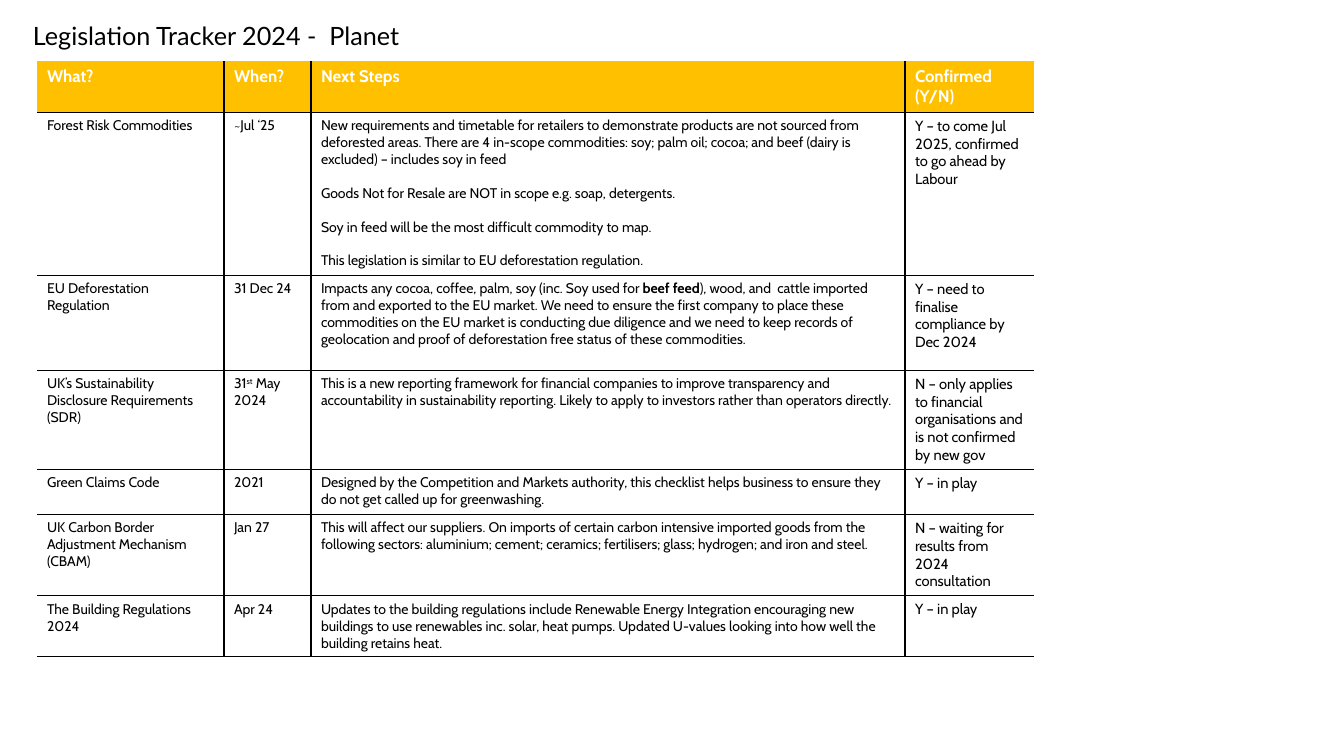
from lxml import etree
from pptx import Presentation
from pptx.dml.color import RGBColor
from pptx.enum.text import MSO_AUTO_SIZE
from pptx.oxml.ns import qn
from pptx.util import Emu, Pt

SHAPE_TO_FIT = MSO_AUTO_SIZE.SHAPE_TO_FIT_TEXT
BLACK = RGBColor(0x00, 0x00, 0x00)
WHITE = RGBColor(0xFF, 0xFF, 0xFF)
AMBER = RGBColor(0xFF, 0xC0, 0x00)

TITLE = "Legislation Tracker 2024 -  Planet"
HEADINGS = ["What?", "When?", "Next Steps", "Confirmed (Y/N)"]

# Each cell lists its paragraphs; a paragraph is a string or a tuple of (text, style) runs.
LAWS = [
    (["Forest Risk Commodities"], ["~Jul ‘25"],
     ["New requirements and timetable for retailers to demonstrate products are not sourced "
      "from deforested areas. There are 4 in-scope commodities: soy; palm oil; cocoa; and beef "
      "(dairy is excluded) – includes soy in feed",
      "Goods Not for Resale are NOT in scope e.g. soap, detergents.",
      "Soy in feed will be the most difficult commodity to map.",
      "This legislation is similar to EU deforestation regulation."],
     ["Y – to come Jul 2025, confirmed to go ahead by Labour"]),
    (["EU Deforestation Regulation"], ["31 Dec 24"],
     [(("Impacts any cocoa, coffee, palm, soy (inc. Soy used for ", None),
       ("beef feed", "bold"),
       ("), wood, and  cattle imported from and exported to the EU market. We need to ensure "
        "the first company to place these commodities on the EU market is conducting due "
        "diligence and we need to keep records of geolocation and proof of deforestation free "
        "status of these commodities.", None))],
     ["Y – need to finalise compliance by Dec 2024"]),
    (["UK’s Sustainability Disclosure Requirements (SDR)"],
     [(("31", None), ("st", "superscript"), (" May 2024", None))],
     ["This is a new reporting framework for financial companies to improve transparency and "
      "accountability in sustainability reporting. Likely to apply to investors rather than "
      "operators directly."],
     ["N – only applies to financial organisations and is not confirmed by new gov"]),
    (["Green Claims Code"], ["2021"],
     ["Designed by the Competition and Markets authority, this checklist helps business to "
      "ensure they do not get called up for greenwashing."],
     ["Y – in play"]),
    (["UK Carbon Border Adjustment Mechanism (CBAM)"], ["Jan 27"],
     ["This will affect our suppliers. On imports of certain carbon intensive imported goods "
      "from the following sectors: aluminium; cement; ceramics; fertilisers; glass; hydrogen; "
      "and iron and steel."],
     ["N – waiting for results from 2024 consultation"]),
    (["The Building Regulations 2024"], ["Apr 24"],
     ["Updates to the building regulations include Renewable Energy Integration encouraging "
      "new buildings to use renewables inc. solar, heat pumps. Updated U-values looking into "
      "how well the building retains heat."],
     ["Y – in play"]),
]

SLIDE_SIZE = (1344, 756)
TITLE_BOX = (23, 15, 514, 40)
TABLE_LEFT, TABLE_TOP = 37, 61
COLUMN_WIDTHS = [187, 87, 594, 129]
ROW_HEIGHTS = [51, 163, 95, 99, 45, 81, 61]
BODY_SIZES = [10, 10, 10, 10.5]
PARAGRAPH_GAP = Pt(12)


def px(length):
    return Emu(round(length * 914400 / 100.8))


def set_font(paragraph, name, size, color, bold=False):
    font = paragraph.font
    font.name, font.size, font.bold = name, Pt(size), bold
    font.color.rgb = color


def write_paragraph(paragraph, content):
    runs = ((content, None),) if isinstance(content, str) else content
    for text, style in runs:
        run = paragraph.add_run()
        run.text = text
        if style == "bold":
            run.font.bold = True
        elif style == "superscript":
            run.font._element.set("baseline", "30000")


def set_borders(cell, ruled_sides):
    """Rule the given sides (letters of LRTB) in black and clear the others."""
    properties = cell._tc.get_or_add_tcPr()
    for position, side in enumerate("LRTB"):
        line = etree.Element(qn(f"a:ln{side}"), w=str(Pt(1)))
        if side in ruled_sides:
            fill = etree.SubElement(line, qn("a:solidFill"))
            etree.SubElement(fill, qn("a:srgbClr"), val=str(BLACK))
        else:
            etree.SubElement(line, qn("a:noFill"))
        properties.insert(position, line)


def add_title(slide):
    frame = slide.shapes.add_textbox(*map(px, TITLE_BOX)).text_frame
    frame.word_wrap = True
    frame.auto_size = SHAPE_TO_FIT
    heading = frame.paragraphs[0]
    write_paragraph(heading, TITLE)
    set_font(heading, "Lato", 18, BLACK)


def add_tracker(slide):
    rows = [[[heading] for heading in HEADINGS], *LAWS]
    table = slide.shapes.add_table(
        len(rows), len(HEADINGS), px(TABLE_LEFT), px(TABLE_TOP),
        px(sum(COLUMN_WIDTHS)), px(sum(ROW_HEIGHTS))).table
    table.first_row = table.horz_banding = False
    for column, width in zip(table.columns, COLUMN_WIDTHS):
        column.width = px(width)
    for row, height in zip(table.rows, ROW_HEIGHTS):
        row.height = px(height)

    for r, row in enumerate(rows):
        for c, paragraphs in enumerate(row):
            cell = table.cell(r, c)
            is_header = r == 0
            if is_header:
                cell.fill.solid()
                cell.fill.fore_color.rgb = AMBER
            else:
                cell.fill.background()
            set_borders(cell, "B" + "T" * (r > 0) + "L" * (c > 0)
                        + "R" * (c < len(HEADINGS) - 1))
            for i, content in enumerate(paragraphs):
                frame = cell.text_frame
                paragraph = frame.add_paragraph() if i else frame.paragraphs[0]
                if i:
                    paragraph.space_before = PARAGRAPH_GAP
                write_paragraph(paragraph, content)
                if is_header:
                    set_font(paragraph, "Cabin", 12, WHITE, bold=True)
                else:
                    set_font(paragraph, "Cabin", BODY_SIZES[c], BLACK)


def main():
    deck = Presentation()
    deck.slide_width, deck.slide_height = map(px, SLIDE_SIZE)
    slide = deck.slides.add_slide(deck.slide_layouts[6])
    add_tracker(slide)
    add_title(slide)
    deck.save("out.pptx")


if __name__ == "__main__":
    main()
